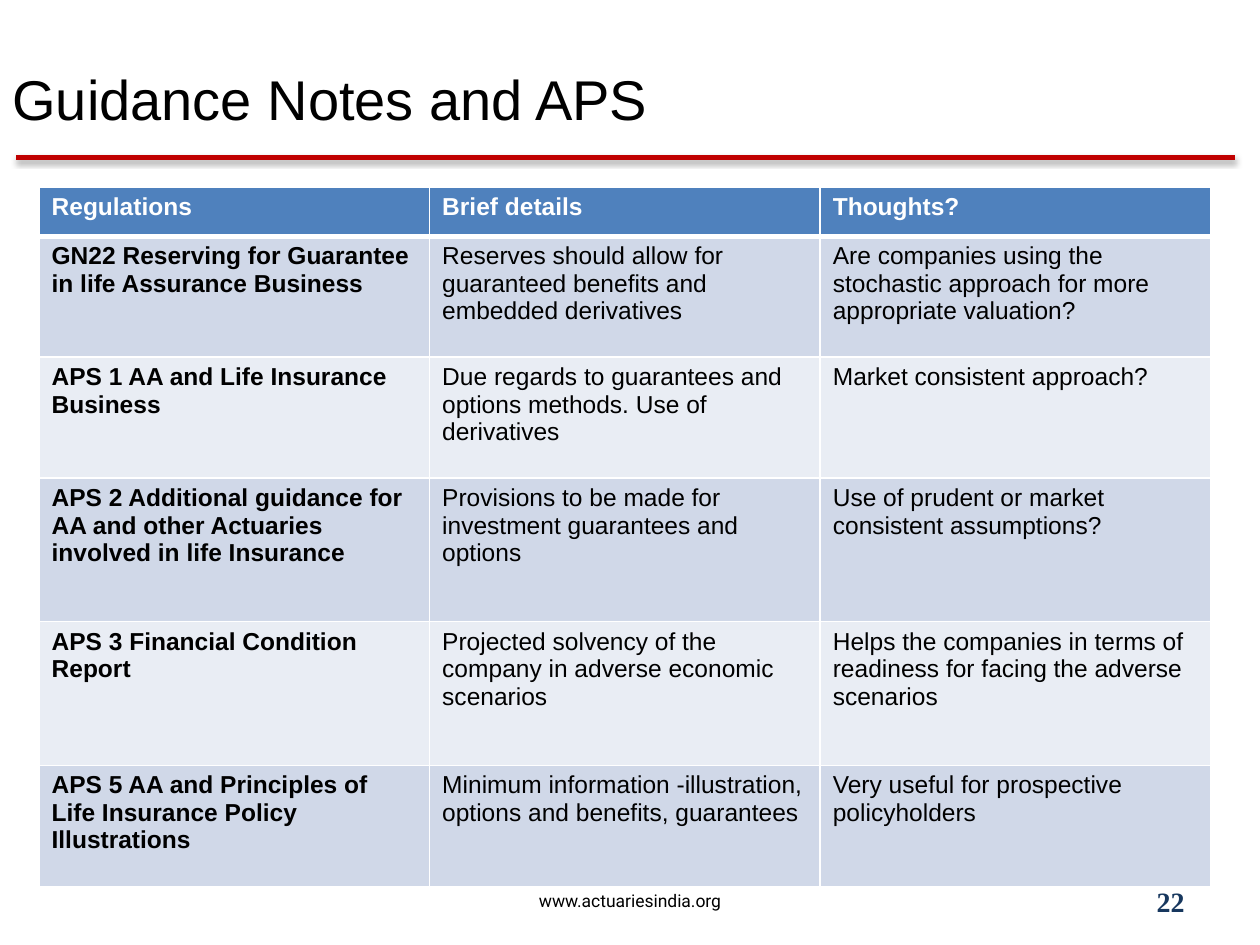
from lxml.etree import SubElement
from pptx import Presentation
from pptx.dml.color import RGBColor
from pptx.enum.shapes import MSO_CONNECTOR
from pptx.enum.text import MSO_ANCHOR, PP_ALIGN
from pptx.oxml.ns import qn
from pptx.util import Inches, Pt

WIDTH, HEIGHT = Inches(10), Inches(7.5)
COLORS = {
    "ink": "000000", "white": "FFFFFF", "rule": "C00000", "number": "17375E",
    "header": "4F81BD", "odd": "D0D8E8", "even": "E9EDF4",
}
ROW_SHARES = [0.39, 0.96, 0.96, 1.14, 1.14, 0.96]
GUIDANCE = [
    ("Regulations", "Brief details", "Thoughts?"),
    ("GN22 Reserving for Guarantee in life Assurance Business",
     "Reserves should allow for guaranteed benefits and embedded derivatives",
     "Are companies using the stochastic approach for more appropriate valuation?"),
    ("APS 1 AA and Life Insurance Business",
     "Due regards to guarantees and options methods. Use of derivatives",
     "Market consistent approach?"),
    ("APS 2 Additional guidance for AA and other Actuaries involved in life Insurance",
     "Provisions to be made for investment guarantees and options",
     "Use of prudent or market consistent assumptions?"),
    ("APS 3 Financial Condition Report",
     "Projected solvency of the company in adverse economic scenarios",
     "Helps the companies in terms of readiness for facing the adverse scenarios"),
    ("APS 5 AA and Principles of Life Insurance Policy Illustrations",
     "Minimum information -illustration, options and benefits, guarantees",
     "Very useful for prospective policyholders"),
]


def region(left, top, width, height):
    return (round(left * WIDTH), round(top * HEIGHT),
            round(width * WIDTH), round(height * HEIGHT))


def write(paragraph, text, size, color, font="Arial", bold=False):
    run = paragraph.add_run()
    run.text = text
    run.font.name = font
    run.font.size = Pt(size)
    run.font.bold = bold
    run.font.color.rgb = RGBColor.from_string(COLORS[color])


def add_label(slide, box, text, size, color, align=PP_ALIGN.LEFT, **style):
    frame = slide.shapes.add_textbox(*box).text_frame
    frame.word_wrap = True
    frame.vertical_anchor = MSO_ANCHOR.MIDDLE
    frame.paragraphs[0].alignment = align
    write(frame.paragraphs[0], text, size, color, **style)


def add_rule(slide, box):
    left, top, width, height = box
    rule = slide.shapes.add_connector(
        MSO_CONNECTOR.STRAIGHT, left, top, left + width, top + height)
    rule.line.color.rgb = RGBColor.from_string(COLORS["rule"])
    rule.line.width = Pt(3)
    effects = SubElement(rule.element.spPr, qn("a:effectLst"))
    shadow = SubElement(effects, qn("a:outerShdw"), blurRad=str(Pt(3.1)),
                        dist=str(Pt(1.6)), dir="5400000", rotWithShape="0")
    shade = SubElement(shadow, qn("a:srgbClr"), val=COLORS["ink"])
    SubElement(shade, qn("a:alpha"), val="38000")


def add_header(slide, box):
    left, top, width, height = box
    add_label(slide, (left, top, round(width * 0.95), height),
              "Guidance Notes and APS", 32, "ink")
    add_rule(slide, (left + round(width * 0.013), top + round(height * 0.806),
                     round(width * 0.967), 0))


def add_footer(slide, box):
    left, top, width, height = box
    add_label(slide, box, "www.actuariesindia.org", 10, "ink",
              PP_ALIGN.CENTER, font="Roboto")
    add_label(slide, (left + round(width * 0.717), top, round(width * 0.233), height),
              "22", 16, "number", PP_ALIGN.RIGHT, font="Times New Roman", bold=True)


def set_borders(cell, widths):
    properties = cell._tc.get_or_add_tcPr()
    for side, points in widths.items():
        border = SubElement(properties, qn(f"a:ln{side}"), w=str(Pt(points)))
        fill = SubElement(border, qn("a:solidFill"))
        SubElement(fill, qn("a:srgbClr"), val=COLORS["white"])


def add_guidance_table(slide, box):
    left, top, width, height = box
    table = slide.shapes.add_table(len(GUIDANCE), len(GUIDANCE[0]), *box).table
    for column in table.columns:
        column.width = width // len(GUIDANCE[0])
    for row, share in zip(table.rows, ROW_SHARES):
        row.height = round(height * share / sum(ROW_SHARES))
    for r, entries in enumerate(GUIDANCE):
        band = "header" if r == 0 else "odd" if r % 2 else "even"
        for c, entry in enumerate(entries):
            cell = table.cell(r, c)
            set_borders(cell, {"L": 1, "R": 1, "T": 3 if r == 1 else 1,
                               "B": 3 if r == 0 else 1})
            cell.fill.solid()
            cell.fill.fore_color.rgb = RGBColor.from_string(COLORS[band])
            write(cell.text_frame.paragraphs[0], entry, 14,
                  "ink" if r else "white", bold=r == 0 or c == 0)


def main():
    deck = Presentation()
    deck.slide_width, deck.slide_height = WIDTH, HEIGHT
    slide = deck.slides.add_slide(deck.slide_layouts[6])
    add_header(slide, region(0, 0, 1, 0.207))
    add_footer(slide, region(0, 0.927, 1, 0.053))
    add_guidance_table(slide, region(0.031, 0.198, 0.93, 0.74))
    deck.save("out.pptx")


if __name__ == "__main__":
    main()
